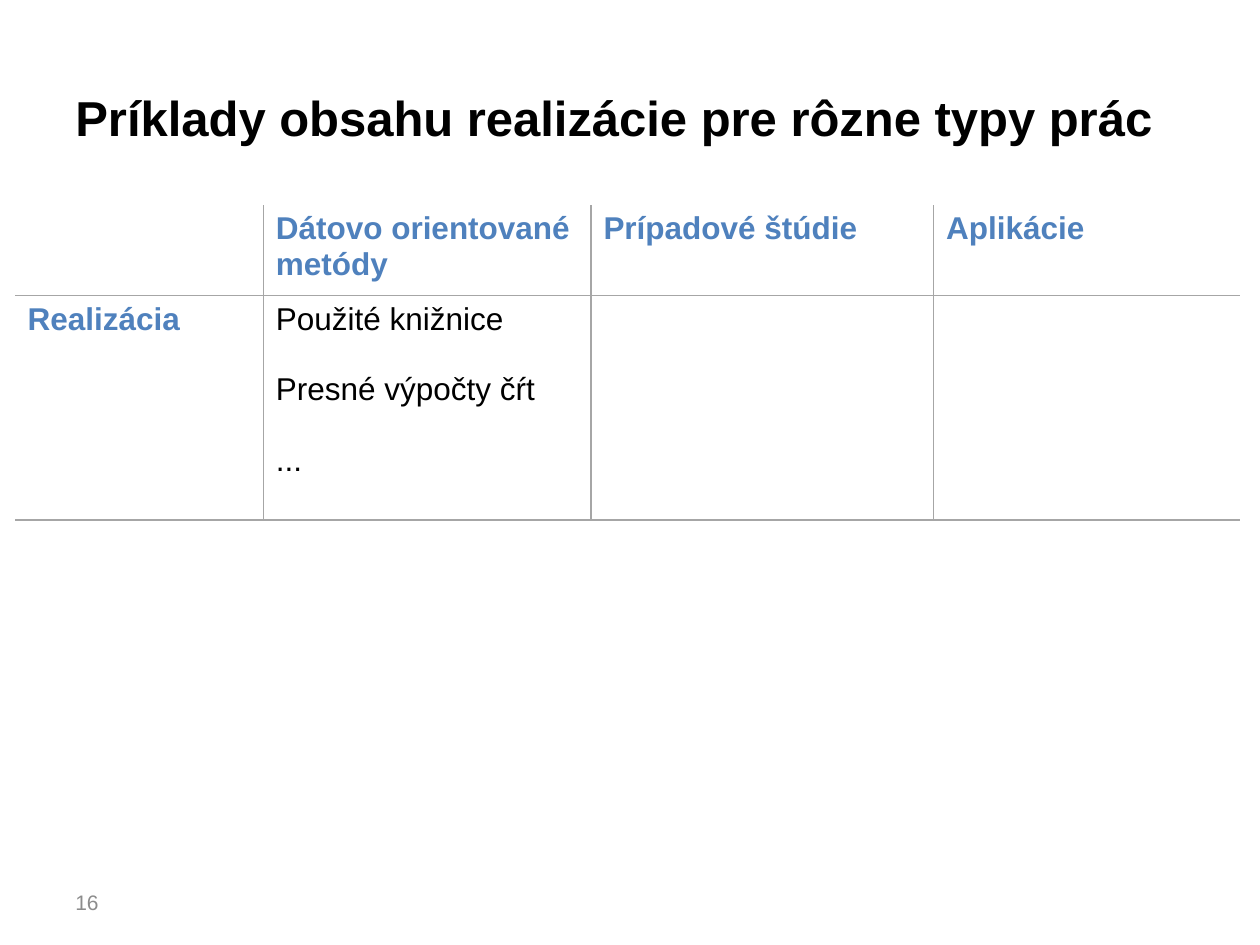
from lxml.etree import SubElement
from pptx import Presentation
from pptx.dml.color import RGBColor
from pptx.enum.text import MSO_ANCHOR
from pptx.oxml.ns import qn
from pptx.util import Inches, Pt

WIDTH, HEIGHT = 10, 7.5
BLACK, BLUE, GREY, RULE = "000000", "4F81BD", "8C8C8C", "A6A6A6"
COLUMNS = [1.97, 2.6, 2.72, 2.43]
ROWS = [0.72, 1.78]
CONTENT = [
    [[], ["Dátovo orientované metódy"], ["Prípadové štúdie"], ["Aplikácie"]],
    [["Realizácia"], ["Použité knižnice", "Presné výpočty čŕt", "..."], [], []],
]


def color(value):
    return RGBColor.from_string(value)


def write(frame, lines, size, ink, bold=False, gap=0):
    for index, line in enumerate(lines):
        paragraph = frame.add_paragraph() if index else frame.paragraphs[0]
        paragraph.text = line
        paragraph.space_before = Pt(gap if index else 0)
        font = paragraph.font
        font.name, font.size, font.bold = "Arial", Pt(size), bold
        font.color.rgb = color(ink)


def add_label(slide, box, text, size, ink, bold=False):
    frame = slide.shapes.add_textbox(*map(Inches, box)).text_frame
    frame.word_wrap = True
    frame.vertical_anchor = MSO_ANCHOR.MIDDLE
    write(frame, [text], size, ink, bold)


def set_borders(cell, visible):
    properties = cell._tc.get_or_add_tcPr()
    for side in ("L", "R", "T", "B"):
        line = SubElement(properties, qn(f"a:ln{side}"), w=str(Pt(1)))
        if side in visible:
            fill = SubElement(line, qn("a:solidFill"))
            SubElement(fill, qn("a:srgbClr"), val=RULE)
        else:
            SubElement(line, qn("a:noFill"))


def add_comparison(slide, left, top):
    box = map(Inches, (left, top, sum(COLUMNS), sum(ROWS)))
    table = slide.shapes.add_table(len(ROWS), len(COLUMNS), *box).table
    table.first_row = table.horz_banding = False
    for column, width in zip(table.columns, COLUMNS):
        column.width = Inches(width)
    for row, height in zip(table.rows, ROWS):
        row.height = Inches(height)
    for r, row_content in enumerate(CONTENT):
        for c, lines in enumerate(row_content):
            cell = table.cell(r, c)
            visible = "B" + "T" * (r > 0) + "L" * (c > 0) + "R" * (c < len(COLUMNS) - 1)
            set_borders(cell, visible)
            cell.fill.background()
            heading = r == 0 or c == 0
            write(cell.text_frame, lines, 18, BLUE if heading else BLACK, heading, gap=20)


def main():
    presentation = Presentation()
    presentation.slide_width, presentation.slide_height = Inches(WIDTH), Inches(HEIGHT)
    slide = presentation.slides.add_slide(presentation.slide_layouts[6])
    margin = 0.05 * WIDTH
    add_label(slide, (margin, 0.04 * HEIGHT, WIDTH - 2 * margin, 1.25),
              "Príklady obsahu realizácie pre rôzne typy prác", 28, BLACK, True)
    add_comparison(slide, 0.012 * WIDTH, 0.217 * HEIGHT)
    add_label(slide, (margin, 0.928 * HEIGHT, 2.33, 0.4), "16", 12, GREY)
    presentation.save("out.pptx")


if __name__ == "__main__":
    main()
